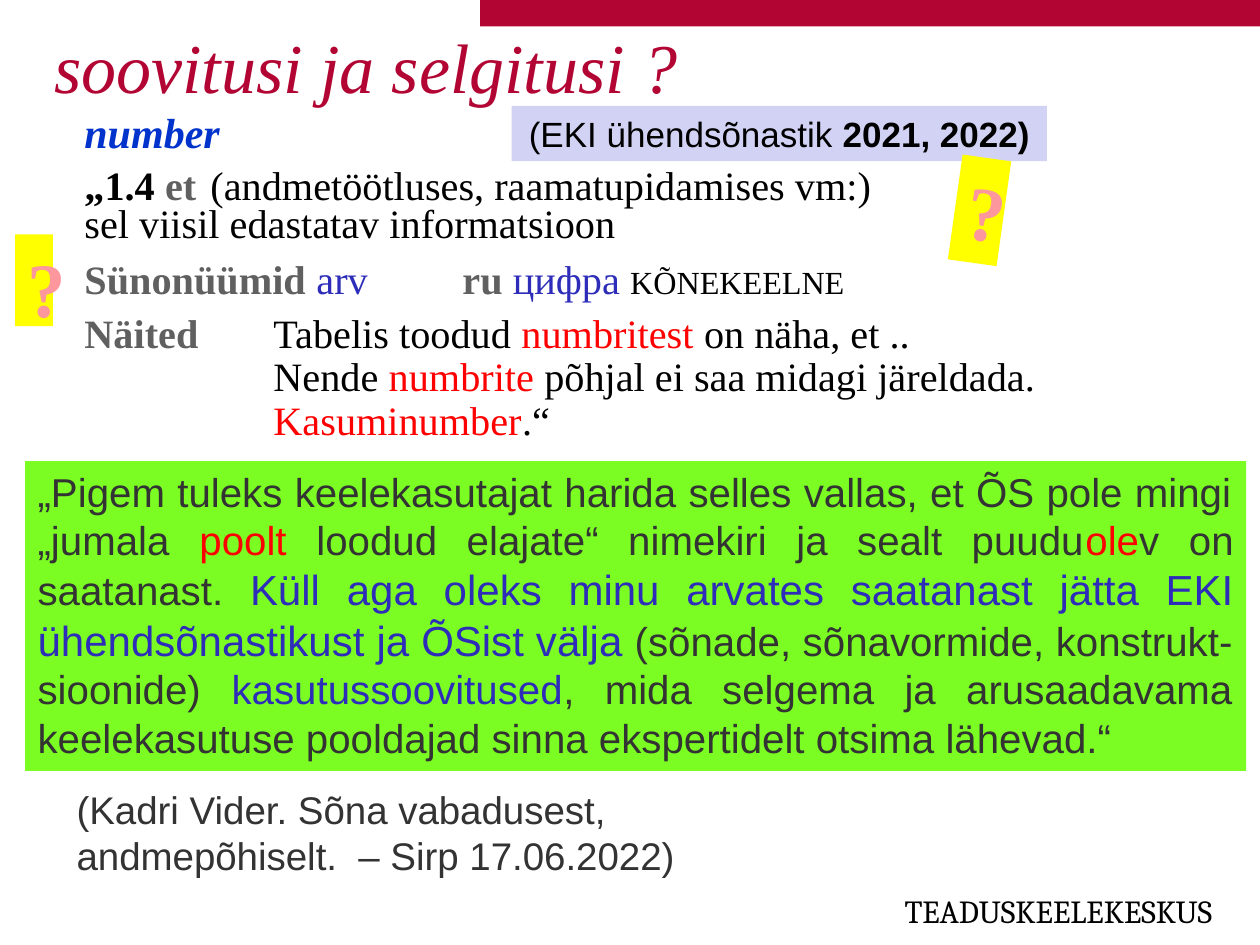
from pptx import Presentation
from pptx.dml.color import RGBColor
from pptx.enum.shapes import MSO_SHAPE as Shape
from pptx.enum.text import MSO_ANCHOR as Anchor, MSO_AUTO_SIZE as AutoSize, PP_ALIGN as Align
from pptx.oxml.ns import qn
from pptx.util import Inches, Pt
from lxml.etree import SubElement

COLORS = {
    "crimson": "B20533", "headword": "0033CC", "black": "000000", "label": "606060",
    "link": "2D2DB9", "red": "FF0000", "dark": "333333", "pink": "FD979E",
    "lavender": "D2D2F4", "yellow": "FFFF00", "green": "7BFD23",
}
SERIF, SANS, FOOTER_FONT = "Times New Roman", "Arial", "Cambria"
TAB_STEP, TAB_COUNT = 0.49, 8

TITLE = [("soovitusi ja selgitusi ?", "crimson", "i")]
ENTRY = [
    (0.8, 0, [("number", "headword", "bi", 24)]),
    (0.8, 7.5, [("„1.4 ", "black", "b"), ("et", "label", "b"),
                ("\t(andmetöötluses, raamatupidamises vm:)\nsel viisil edastatav informatsioon", "black")]),
    (0.9, 7.5, [("Sünonüümid ", "label", "b"), ("arv\t\t", "link"), ("ru ", "label", "b"),
                ("цифра ", "link"), ("kõnekeelne", "black", "s")]),
    (0.9, 6, [("Näited\t\t", "label", "b"), ("Tabelis toodud ", "black"),
              ("numbritest", "red"), (" on näha, et ..", "black")]),
    (0.9, 0, [("\t\t\tNende ", "black"), ("numbrite", "red"),
              (" põhjal ei saa midagi järeldada.", "black")]),
    (0.9, 0, [("\t\t\t", "black"), ("Kasuminumber", "red"), (".“", "black")]),
]
SOURCE = [("(EKI ühendsõnastik ", "black"), ("2021, 2022)", "black", "b")]
QUOTE = [
    ("„Pigem tuleks keelekasutajat harida selles vallas, et ÕS pole mingi „jumala ", "dark"),
    ("poolt", "red"), (" loodud elajate“ nimekiri ja sealt puudu", "dark"),
    ("ole", "red"), ("v on saatanast. ", "dark"),
    ("Küll aga oleks minu arvates saatanast jätta EKI ühendsõnastikust ja ÕSist välja ", "link", "", 24),
    ("(sõnade, sõnavormide, konstrukt-sioonide) ", "dark"), ("kasutussoovitused", "link"),
    (", mida selgema ja arusaadavama keelekasutuse pooldajad sinna ekspertidelt otsima lähevad.“", "dark"),
]
CITATION = [("(Kadri Vider. Sõna vabadusest, andmepõhiselt.  – Sirp 17.06.2022)", "dark")]
FOOTER = [("teaduskeelekeskus", "black", "s")]
QUESTION = [("?", "pink", "b")]
QUESTION_MARKS = [((0.12, 1.86, 0.3, 0.73), 0), ((7.58, 1.25, 0.39, 0.84), 8)]


def color(name):
    return RGBColor.from_string(COLORS[name])


def write(paragraph, pieces, font_name, size, align=Align.LEFT):
    paragraph.alignment = align
    for text, tint, style, own_size in ((*piece, "", size)[:4] if len(piece) < 4 else piece
                                        for piece in map(pad, pieces)):
        for index, line in enumerate(text.split("\n")):
            if index:
                paragraph.add_line_break()
            run = paragraph.add_run()
            run.text = line
            font = run.font
            font.name, font.size = font_name, Pt(own_size or size)
            font.bold, font.italic = "b" in style, "i" in style
            font.color.rgb = color(tint)
            if "s" in style:
                run._r.get_or_add_rPr().set("cap", "small")


def pad(piece):
    return (*piece, "", None)[:4] if len(piece) == 2 else (*piece, None)[:4]


def place(item, box):
    item.left, item.top, item.width, item.height = map(Inches, box)


def set_frame(frame, anchor=Anchor.TOP, inset=None):
    frame.word_wrap = True
    frame.auto_size = AutoSize.NONE
    frame.vertical_anchor = anchor
    if inset is not None:
        frame.margin_left = frame.margin_right = frame.margin_top = frame.margin_bottom = inset


def add_panel(slide, box, fill, rotation=0):
    panel = slide.shapes.add_shape(Shape.RECTANGLE, *map(Inches, box))
    panel.shadow.inherit = False
    panel.fill.solid()
    panel.fill.fore_color.rgb = color(fill)
    panel.line.fill.background()
    panel.rotation = rotation
    set_frame(panel.text_frame)
    return panel.text_frame.paragraphs[0]


def add_note(slide, box):
    note = slide.shapes.add_textbox(*map(Inches, box))
    set_frame(note.text_frame)
    return note.text_frame.paragraphs[0]


def remove_bullet_and_set_tabs(paragraph):
    properties = paragraph._p.get_or_add_pPr()
    properties.set("marL", "0")
    properties.set("indent", "0")
    SubElement(properties, qn("a:buNone"))
    tabs = SubElement(properties, qn("a:tabLst"))
    for number in range(1, TAB_COUNT + 1):
        SubElement(tabs, qn("a:tab"), pos=str(Inches(TAB_STEP * number)), algn="l")


def main():
    deck = Presentation()
    deck.slide_width, deck.slide_height = Inches(10), Inches(7.5)
    slide = deck.slides.add_slide(deck.slide_layouts[1])
    title, entry = slide.shapes.title, slide.placeholders[1]

    add_panel(slide, (3.81, 0, 6.19, 0.21), "crimson")

    place(title, (0.43, -0.03, 8.99, 1.24))
    set_frame(title.text_frame, Anchor.MIDDLE, 0)
    heading = title.text_frame.paragraphs[0]
    heading.line_spacing = 0.75
    write(heading, TITLE, SERIF, 40)

    place(entry, (0.67, 0.92, 9.21, 2.56))
    set_frame(entry.text_frame, inset=0)
    for index, (spacing, before, pieces) in enumerate(ENTRY):
        paragraph = entry.text_frame.add_paragraph() if index else entry.text_frame.paragraphs[0]
        remove_bullet_and_set_tabs(paragraph)
        paragraph.line_spacing, paragraph.space_before = spacing, Pt(before)
        write(paragraph, pieces, SERIF, 23)

    write(add_panel(slide, (4.06, 0.84, 4.25, 0.44), "lavender"), SOURCE, SANS, 20, Align.CENTER)
    write(add_note(slide, (6.28, 6.96, 3.44, 0.49)), FOOTER, FOOTER_FONT, 23, Align.RIGHT)
    for box, rotation in QUESTION_MARKS:
        write(add_panel(slide, box, "yellow", rotation), QUESTION, SERIF, 44, Align.CENTER)
    write(add_panel(slide, (0.2, 3.66, 9.69, 2.46), "green"), QUOTE, SANS, 23, Align.JUSTIFY)
    write(add_note(slide, (0.51, 6.19, 5.2, 0.84)), CITATION, SANS, 22)

    deck.save("out.pptx")


if __name__ == "__main__":
    main()
